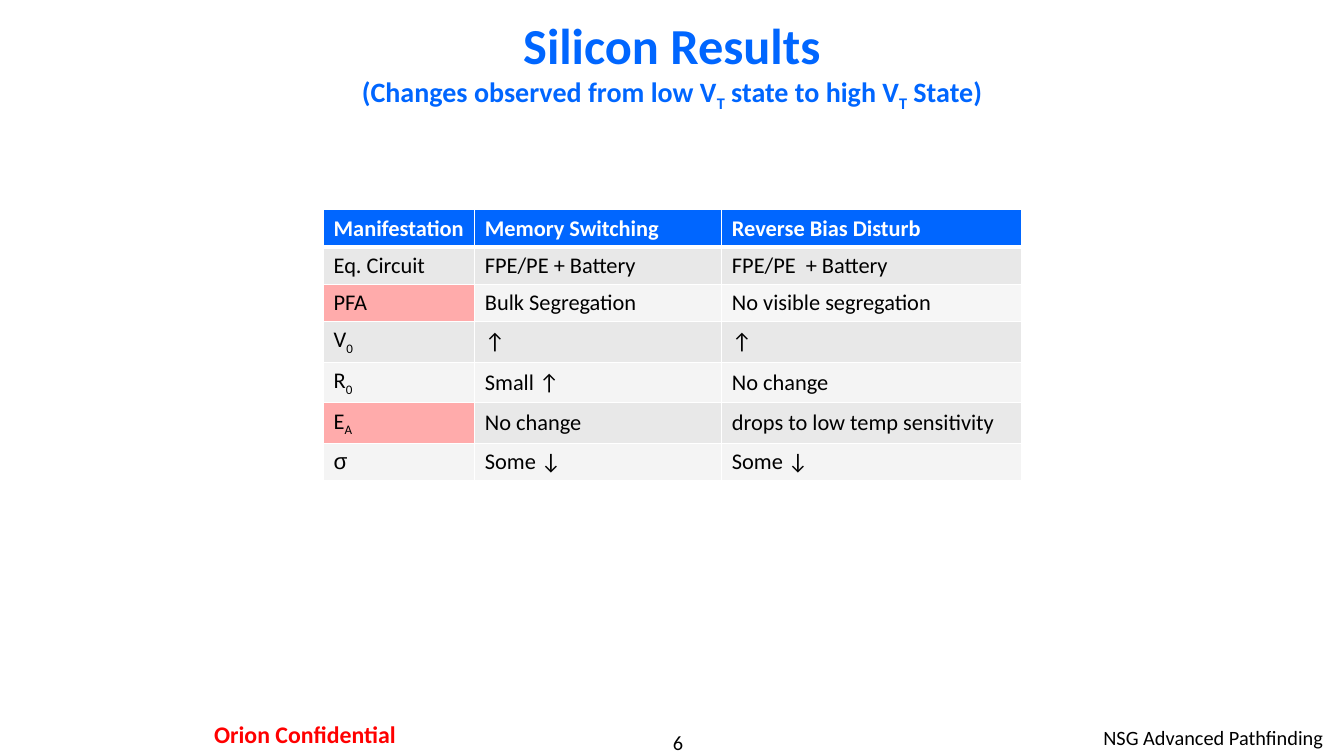
"""Build the Silicon Results slide with its comparison table."""
from dataclasses import dataclass
from typing import Optional

from lxml import etree
from pptx import Presentation
from pptx import util as u
from pptx.dml import color
from pptx.enum import text
from pptx.oxml import ns


@dataclass(frozen=True)
class Theme:
    font: str = "Calibri"
    greek_font: str = "Arial"
    blue: str = "0066FF"
    red: str = "FF0000"
    black: str = "000000"
    white: str = "FFFFFF"
    band_dark: str = "E8E8E8"
    band_light: str = "F4F4F4"
    title_size: float = 36
    subtitle_size: float = 20
    table_size: float = 16
    footer_size: float = 14.5
    notice_size: float = 17


@dataclass(frozen=True)
class Style:
    size: float
    color: str
    bold: bool = False
    font: str = Theme.font


@dataclass(frozen=True)
class Label:
    words: str
    left: float
    top: float
    width: float
    height: float
    align: text.PP_ALIGN
    style: Style
    inset_x: float = 0.1
    inset_y: float = 0.05


@dataclass(frozen=True)
class Fill:
    color: str
    opacity: Optional[int] = None


THEME = Theme()
FOOTER = Style(THEME.footer_size, THEME.black)
LABELS = [
    Label("6", 5.56, 7.24, 2.33, 0.24, text.PP_ALIGN.CENTER, FOOTER, 0, 0),
    Label("NSG Advanced Pathfinding", 8.83, 7.15, 4.39, 0.35, text.PP_ALIGN.RIGHT, FOOTER),
    Label("Orion Confidential", 1.55, 7.08, 2.95, 0.41, text.PP_ALIGN.CENTER,
          Style(THEME.notice_size, THEME.red, True), 0.12, 0.06),
]
ROWS = [
    ("Manifestation", "Memory Switching", "Reverse Bias Disturb"),
    ("Eq. Circuit", "FPE/PE + Battery", "FPE/PE  + Battery"),
    ("PFA", "Bulk Segregation", "No visible segregation"),
    ("V_0", "↑", "↑"),
    ("R_0", "Small ↑", "No change"),
    ("E_A", "No change", "drops to low temp sensitivity"),
    ("σ", "Some ↓", "Some ↓"),
]
COLUMN_WIDTHS = [1.5, 2.45, 2.97]
ROW_HEIGHT, SUBSCRIPT_ROW_HEIGHT = 0.37, 0.4
HIGHLIGHTS = {
    (2, 0): Fill(THEME.red, 33),
    (5, 0): Fill(THEME.red, 33),
    (2, 2): Fill("E6E6E6", 33),
    (5, 2): Fill("BFBFBF", 34),
}


def add_words(paragraph, words: str, style: Style) -> None:
    """Add runs, with every second part between underscores as a subscript."""
    for index, part in enumerate(words.split("_")):
        run = paragraph.add_run()
        run.text = part
        run.font.size = u.Pt(style.size)
        run.font.name = style.font
        run.font.bold = style.bold
        run.font.color.rgb = color.RGBColor.from_string(style.color)
        if index % 2:
            run.font._element.set("baseline", "-25000")


def add_label(slide, label: Label) -> None:
    """Add one footer text box."""
    box = slide.shapes.add_textbox(*map(u.Inches, (label.left, label.top, label.width, label.height)))
    frame = box.text_frame
    frame.word_wrap = True
    frame.margin_left = frame.margin_right = u.Inches(label.inset_x)
    frame.margin_top = frame.margin_bottom = u.Inches(label.inset_y)
    paragraph = frame.paragraphs[0]
    paragraph.alignment = label.align
    add_words(paragraph, label.words, label.style)


def set_title(slide) -> None:
    """Place the title and its smaller second line."""
    title = slide.shapes.title
    title.left, title.top, title.width, title.height = map(u.Inches, (1, 0.17, 11.33, 0.92))
    frame = title.text_frame
    frame.word_wrap = True
    frame.auto_size = text.MSO_AUTO_SIZE.NONE
    frame.vertical_anchor = text.MSO_ANCHOR.MIDDLE
    paragraph = frame.paragraphs[0]
    paragraph.alignment = text.PP_ALIGN.CENTER
    add_words(paragraph, "Silicon Results", Style(THEME.title_size, THEME.blue, True))
    paragraph.add_line_break()
    line_break = paragraph._p.find(ns.qn("a:br"))
    etree.SubElement(line_break, ns.qn("a:rPr"), sz=str(THEME.title_size * 100))
    add_words(paragraph, "(Changes observed from low V_T_ state to high V_T_ State)",
              Style(THEME.subtitle_size, THEME.blue, True))


def set_borders(cell, row: int) -> None:
    """Draw white cell borders, thicker below the header."""
    widths = {"L": 1, "R": 1, "T": 3 if row == 1 else 1, "B": 3 if row == 0 else 1}
    properties = cell._tc.get_or_add_tcPr()
    for index, (side, width) in enumerate(widths.items()):
        line = etree.Element(ns.qn(f"a:ln{side}"), w=str(u.Pt(width)))
        solid = etree.SubElement(line, ns.qn("a:solidFill"))
        etree.SubElement(solid, ns.qn("a:srgbClr"), val=THEME.white)
        properties.insert(index, line)


def set_fill(cell, fill: Fill) -> None:
    """Fill a cell, partly transparent when an opacity is given."""
    cell.fill.solid()
    cell.fill.fore_color.rgb = color.RGBColor.from_string(fill.color)
    if fill.opacity is not None:
        shade = cell._tc.tcPr.find(ns.qn("a:solidFill"))[0]
        etree.SubElement(shade, ns.qn("a:alpha"), val=str(fill.opacity * 1000))


def band_fill(row: int) -> Fill:
    """Return the usual fill of a table row."""
    if row == 0:
        return Fill(THEME.blue)
    return Fill(THEME.band_dark if row % 2 else THEME.band_light)


def add_results_table(slide) -> None:
    """Add the table of observed changes."""
    heights = [SUBSCRIPT_ROW_HEIGHT if "_" in row[0] else ROW_HEIGHT for row in ROWS]
    frame = slide.shapes.add_table(
        len(ROWS), len(COLUMN_WIDTHS), u.Inches(3.21), u.Inches(2.08),
        u.Inches(sum(COLUMN_WIDTHS)), u.Inches(sum(heights)))
    table = frame.table
    for column, width in zip(table.columns, COLUMN_WIDTHS):
        column.width = u.Inches(width)
    for row, (values, height) in enumerate(zip(ROWS, heights)):
        table.rows[row].height = u.Inches(height)
        header = row == 0
        for column, words in enumerate(values):
            cell = table.cell(row, column)
            cell.vertical_anchor = text.MSO_ANCHOR.MIDDLE
            style = Style(THEME.table_size, THEME.white if header else THEME.black, header,
                          THEME.greek_font if words == "σ" else THEME.font)
            add_words(cell.text_frame.paragraphs[0], words, style)
            set_fill(cell, HIGHLIGHTS.get((row, column), band_fill(row)))
            set_borders(cell, row)


def main() -> None:
    """Build and save the presentation."""
    presentation = Presentation()
    presentation.slide_width = u.Inches(13.33)
    presentation.slide_height = u.Inches(7.5)
    slide = presentation.slides.add_slide(presentation.slide_layouts[5])
    for label in LABELS:
        add_label(slide, label)
    set_title(slide)
    add_results_table(slide)
    presentation.save("out.pptx")


if __name__ == "__main__":
    main()
